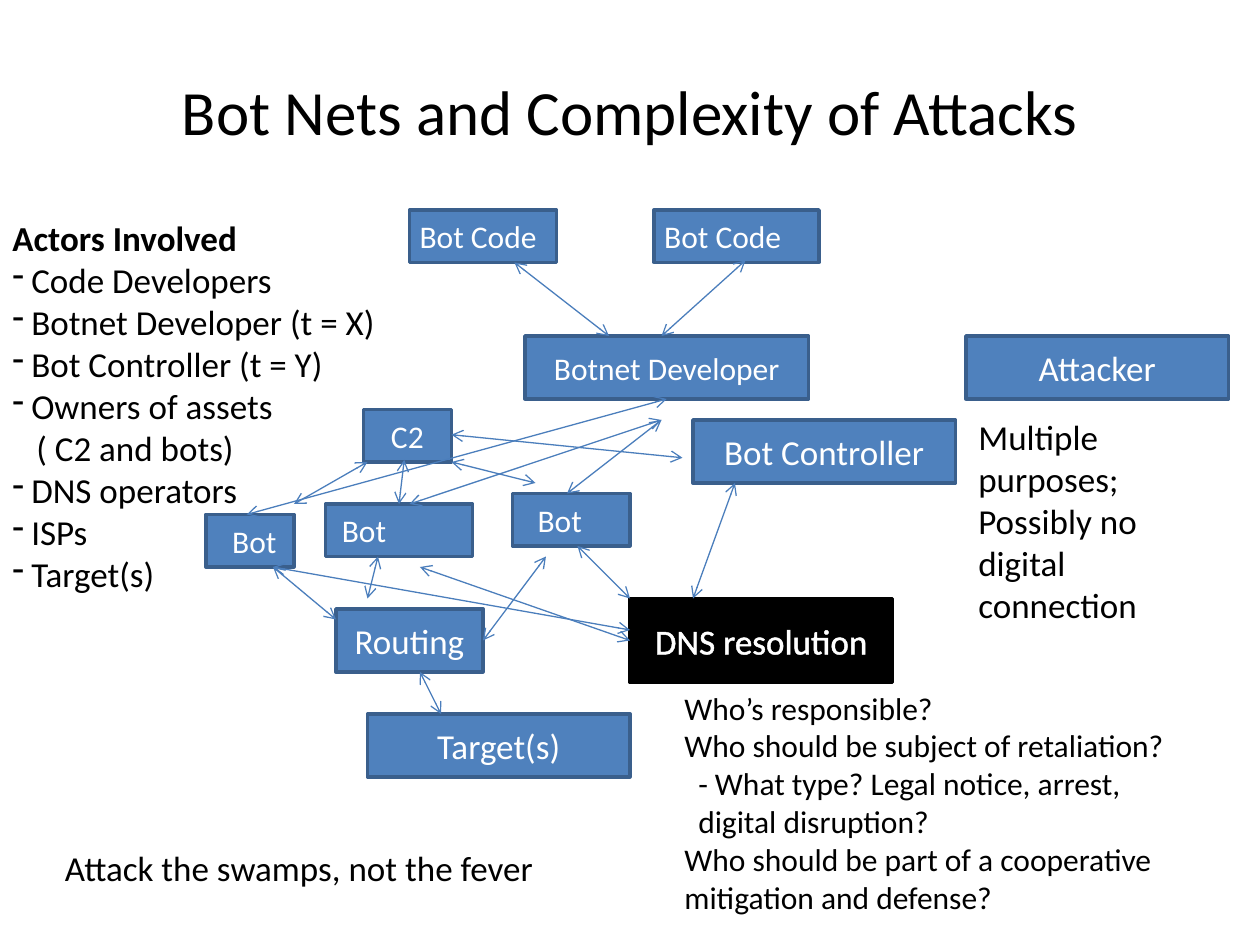
import pptx
import pptx.util
import pptx.dml.color
import pptx.enum.shapes
import pptx.enum.text
import pptx.oxml.ns
from dataclasses import dataclass
from lxml import etree

PP = pptx.enum.text.PP_ALIGN
ANCHOR = pptx.enum.text.MSO_ANCHOR


@dataclass(frozen=True)
class Theme:
    font: str = "Calibri"
    blue: str = "4F81BD"
    edge: str = "3A5F8C"
    arrow: str = "4B7EBC"
    black: str = "000000"
    white: str = "FFFFFF"
    title: int = 36
    large: int = 20
    small: int = 18


def rgb(value):
    return pptx.dml.color.RGBColor.from_string(value)


def add_xml(parent, tag, **attrs):
    el = etree.SubElement(parent, pptx.oxml.ns.qn(tag))
    for name, value in attrs.items():
        el.set(name, str(value))
    return el


class Board:
    """A slide on a grid of 120 columns and 90 rows."""

    def __init__(self, prs, theme):
        self.theme = theme
        self.col = prs.slide_width / 120
        self.row = prs.slide_height / 90
        self.slide = prs.slides.add_slide(prs.slide_layouts[5])

    def grid(self, x, y):
        return round(x * self.col), round(y * self.row)

    def style(self, p, size, color, bold=False):
        for r in p.runs:
            r.font.name = self.theme.font
            r.font.size = pptx.util.Pt(size)
            r.font.bold = bold
            r.font.color.rgb = rgb(color)

    def title(self, text, x, y, w, h):
        sp = self.slide.shapes.title
        sp.left, sp.top = self.grid(x, y)
        sp.width, sp.height = self.grid(w, h)
        tf = sp.text_frame
        tf.text = text
        tf.vertical_anchor = ANCHOR.MIDDLE
        tf.paragraphs[0].alignment = PP.CENTER
        self.style(tf.paragraphs[0], self.theme.title, self.theme.black)

    def box(self, text, x, y, w, h, size, inset=None, fill=None, edge=None):
        """A filled box; an inset (inches) sets its label flush left."""
        sp = self.slide.shapes.add_shape(
            pptx.enum.shapes.MSO_SHAPE.RECTANGLE, *self.grid(x, y), *self.grid(w, h))
        sp.shadow.inherit = False
        sp.fill.solid()
        sp.fill.fore_color.rgb = rgb(fill or self.theme.blue)
        sp.line.color.rgb = rgb(edge or self.theme.edge)
        sp.line.width = pptx.util.Pt(2)
        tf = sp.text_frame
        tf.text = text
        tf.vertical_anchor = ANCHOR.MIDDLE
        p = tf.paragraphs[0]
        p.alignment = PP.CENTER
        if inset is not None:
            p.alignment = PP.LEFT
            tf.margin_left, tf.margin_right = pptx.util.Inches(inset), 0
        self.style(p, size, self.theme.white)
        return sp

    def outline_text(self, sp, color, width):
        for r in sp.text_frame.paragraphs[0].runs:
            ln = add_xml(r.font._element, "a:ln", w=pptx.util.Pt(width))
            add_xml(add_xml(ln, "a:solidFill"), "a:srgbClr", val=color)
            r.font._element.insert(0, ln)

    def arrow(self, start, end):
        line = self.slide.shapes.add_connector(
            pptx.enum.shapes.MSO_CONNECTOR.STRAIGHT, *self.grid(*start), *self.grid(*end))
        line.line.color.rgb = rgb(self.theme.arrow)
        line.line.width = pptx.util.Pt(0.75)
        ln = line.line._get_or_add_ln()
        for tag in ("a:headEnd", "a:tailEnd"):
            add_xml(ln, tag, type="arrow")
        add_xml(line._element.spPr, "a:effectLst")

    def text(self, paragraphs, x, y, w, h, size, wrap=True):
        """Paragraphs are (text, kind): plain, bold, dash, or an indent in inches."""
        sp = self.slide.shapes.add_textbox(*self.grid(x, y), *self.grid(w, h))
        tf = sp.text_frame
        tf.word_wrap = wrap
        tf.text = "\n".join(text for text, kind in paragraphs)
        for p, (text, kind) in zip(tf.paragraphs, paragraphs):
            self.style(p, size, self.theme.black, kind == "bold")
            pPr = p._p.get_or_add_pPr()
            if kind == "dash":
                hang = pptx.util.Inches(0.15)
                pPr.set("marL", str(hang))
                pPr.set("indent", str(-hang))
                add_xml(pPr, "a:buChar", char="-")
            elif isinstance(kind, float):
                pPr.set("marL", str(pptx.util.Inches(kind)))


def main():
    prs = pptx.Presentation()
    prs.slide_width = pptx.util.Inches(10)
    prs.slide_height = pptx.util.Inches(7.5)
    theme = Theme()
    s = Board(prs, theme)
    s.title("Bot Nets and Complexity of Attacks", 6, 3, 108, 15)

    # Small boxes with labels set flush left
    for text, x, y, w, inset in [
        ("Bot", 19.6, 49, 8.4, 0.21),
        ("Bot Code", 62.3, 20, 15.7, 0.08),
        ("Bot Code", 39, 20, 14, 0.08),
        ("Bot", 48.8, 47, 11.2, 0.2),
        ("Bot", 31, 48, 14, 0.13),
    ]:
        s.box(text, x, y, w, 5, theme.small, inset)

    # Boxes with centred labels
    for text, x, y, w, h, size in [
        ("Routing", 32, 58, 14, 6, theme.large),
        ("Botnet Developer", 50, 32, 27, 6, theme.small),
        ("Target(s)", 35, 68, 25, 6, theme.large),
        ("Bot Controller", 66, 40, 25, 6, theme.large),
        ("C2", 34.6, 39, 8.4, 5, theme.small),
        ("Attacker", 92, 32, 25, 6, theme.large),
    ]:
        s.box(text, x, y, w, h, size)
    dns = s.box("DNS resolution", 60, 57, 25, 8, theme.large,
                fill=theme.black, edge=theme.black)
    s.outline_text(dns, theme.white, 1.45)

    # Two-way links
    for start, end in [
        ((70, 46), (66, 57)),        # Bot Controller - DNS
        ((55, 52), (60, 57)),        # bots - DNS
        ((60, 61), (40, 54)),
        ((26, 54), (60, 60)),
        ((65, 43.6), (43, 41.4)),    # Bot Controller - C2
        ((36, 53), (35, 57)),        # bots - Routing
        ((26, 54), (32, 59)),
        ((52, 53), (46, 61)),
        ((40, 64), (42, 68)),        # Routing - Target(s)
        ((35, 44), (28, 48)),        # C2 - bots
        ((38.5, 43.8), (38, 48)),
        ((43, 44), (51, 46)),
        ((63.5, 38), (23.5, 49)),    # Botnet Developer - bots
        ((63, 40), (39, 48)),
        ((63, 40), (54, 47)),
        ((71, 24.8), (63, 32)),      # Bot Code - Botnet Developer
        ((49, 25), (58, 32)),
    ]:
        s.arrow(start, end)

    # Notes
    s.text([("Multiple purposes;", "plain"), ("Possibly no", "plain"),
            ("digital", "plain"), ("connection", "plain")],
           92, 39, 23, 25, theme.large)
    s.text([("Who’s responsible?", "plain"),
            ("Who should be subject of retaliation?", "plain"),
            ("- What type? Legal notice, arrest,", 0.11),
            ("digital disruption?", 0.11),
            ("Who should be part of a cooperative mitigation and defense?", "plain")],
           64, 65, 56, 23, theme.small)
    s.text([("Actors Involved", "bold"), ("Code Developers", "dash"),
            ("Botnet Developer (t = X)", "dash"), ("Bot Controller (t = Y)", "dash"),
            ("Owners of assets", "dash"), ("( C2 and bots)", 0.19),
            ("DNS operators", "dash"), ("ISPs", "dash"), ("Target(s)", "dash")],
           0, 20, 41, 37.5, theme.large)
    s.text([("Attack the swamps, not the fever", "plain")],
           5, 80, 52, 5.3, theme.large, wrap=False)

    prs.save("out.pptx")


if __name__ == "__main__":
    main()
